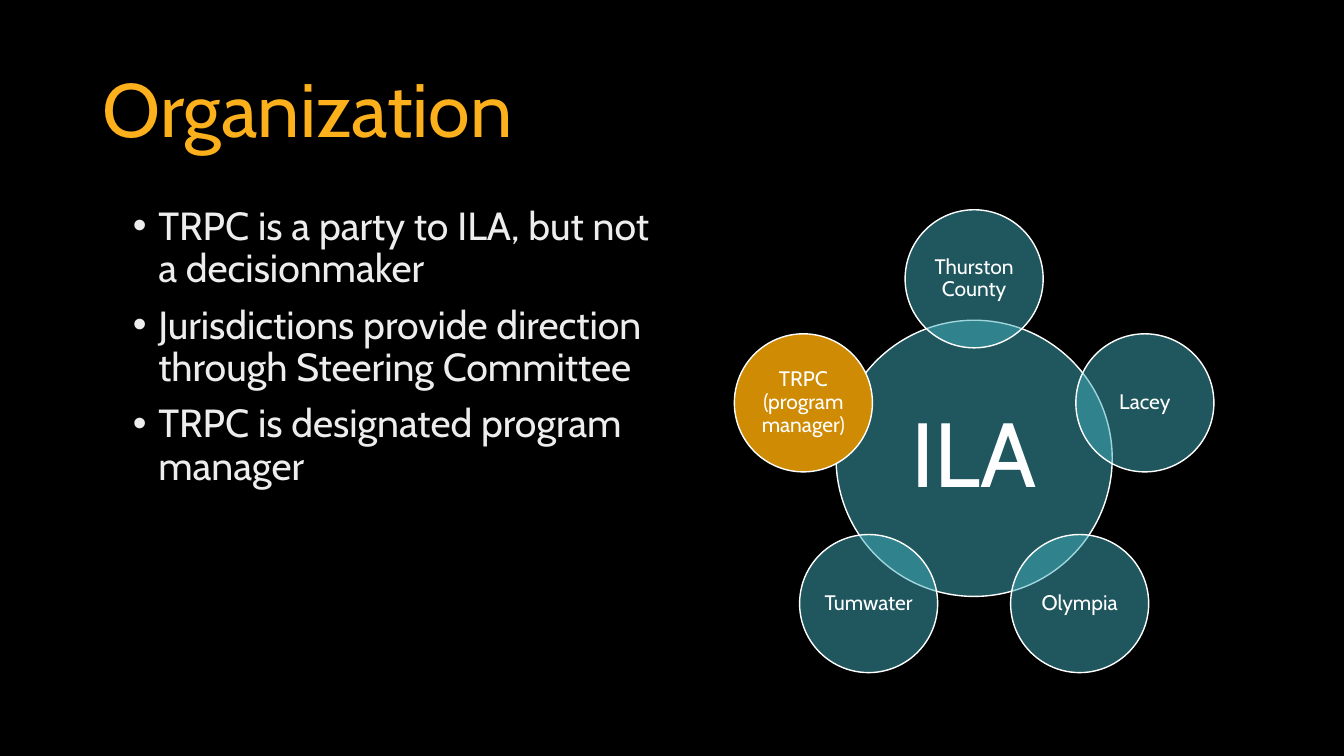
from math import cos, pi, sin

from lxml.etree import SubElement
from pptx import Presentation
from pptx.dml.color import RGBColor
from pptx.enum.shapes import MSO_SHAPE
from pptx.enum.text import MSO_ANCHOR, MSO_AUTO_SIZE, PP_ALIGN
from pptx.oxml.ns import qn
from pptx.util import Cm, Pt

COLORS = {
    "background": "000000",
    "title": "FCB11C",
    "body": "EDEDED",
    "member": "41AEBD",
    "manager": "CF8B03",
    "white": "FFFFFF",
}
FONT = "Cabin"
POINTS = [
    "TRPC is a party to ILA, but not a decisionmaker",
    "Jurisdictions provide direction through Steering Committee",
    "TRPC is designated program manager",
]
# Clockwise from the top
PARTIES = [
    ("Thurston County", "member"),
    ("Lacey", "member"),
    ("Olympia", "member"),
    ("Tumwater", "member"),
    ("TRPC (program manager)", "manager"),
]


def rgb(name):
    return RGBColor.from_string(COLORS[name])


def set_values(target, values):
    for name, value in values.items():
        setattr(target, name, value)


def format_para(para, size, color, **values):
    set_values(para, {"line_spacing": 0.9, **values})
    set_values(para.font, {"name": FONT, "size": Pt(size), "bold": False})
    para.font.color.rgb = rgb(color)


def add_bullet(para, indent):
    properties = para._p.get_or_add_pPr()
    properties.set("marL", str(indent))
    properties.set("indent", str(-indent))
    SubElement(properties, qn("a:buFont")).set("typeface", "Arial")
    SubElement(properties, qn("a:buChar")).set("char", "•")


def place_title(page, left, top, width, height):
    title = page.shapes.title
    set_values(title, {"left": Cm(left), "top": Cm(top),
                       "width": Cm(width), "height": Cm(height)})
    frame = title.text_frame
    frame.text = "Organization"
    set_values(frame, {"vertical_anchor": MSO_ANCHOR.MIDDLE,
                       "auto_size": MSO_AUTO_SIZE.NONE, "word_wrap": True})
    format_para(frame.paragraphs[0], 54, "title", alignment=PP_ALIGN.LEFT)


def add_points(page, left, top, width, height):
    box = page.shapes.add_textbox(Cm(left), Cm(top), Cm(width), Cm(height))
    frame = box.text_frame
    frame.word_wrap = True
    for index, point in enumerate(POINTS):
        para = frame.add_paragraph() if index else frame.paragraphs[0]
        para.text = point
        add_bullet(para, Cm(0.64))
        format_para(para, 28, "body", space_before=Pt(10 if index else 0))


def add_circle(page, center_x, center_y, diameter, label, size, margin, color):
    corner = (Cm(center_x - diameter / 2), Cm(center_y - diameter / 2))
    circle = page.shapes.add_shape(
        MSO_SHAPE.OVAL, *corner, Cm(diameter), Cm(diameter))
    circle.shadow.inherit = False
    circle.fill.solid()
    circle.fill.fore_color.rgb = rgb(color)
    if color == "member":
        tint = circle._element.spPr.find(qn("a:solidFill"))[0]
        SubElement(tint, qn("a:alpha")).set("val", "50000")
    circle.line.color.rgb = rgb("white")
    circle.line.width = Pt(1)
    frame = circle.text_frame
    frame.text = label
    sides = ("left", "top", "right", "bottom")
    set_values(frame, {f"margin_{side}": Cm(margin) for side in sides})
    set_values(frame, {"word_wrap": True, "vertical_anchor": MSO_ANCHOR.MIDDLE})
    format_para(frame.paragraphs[0], size, "white", alignment=PP_ALIGN.CENTER)


def add_agreement_diagram(page, center_x, center_y, hub):
    """Draw the agreement as a hub with its parties spaced evenly around it."""
    add_circle(page, center_x, center_y, hub, "ILA", 65, 0.23, "member")
    orbit = hub * 0.65
    for index, (label, color) in enumerate(PARTIES):
        angle = 2 * pi * index / len(PARTIES)
        add_circle(page, center_x + orbit * sin(angle),
                   center_y - orbit * cos(angle),
                   hub / 2, label, 15, 0.05, color)


def build_organization_page(deck):
    page = deck.slides.add_slide(deck.slide_layouts[5])
    page.background.fill.solid()
    page.background.fill.fore_color.rgb = rgb("background")
    place_title(page, 2.33, 1.02, 29.21, 3.68)
    add_points(page, 3.1, 5.08, 13.97, 12.09)
    add_agreement_diagram(page, 24.55, 11.55, 6.96)


def main():
    deck = Presentation()
    set_values(deck, {"slide_width": Cm(33.87), "slide_height": Cm(19.05)})
    build_organization_page(deck)
    deck.save("out.pptx")


if __name__ == "__main__":
    main()
